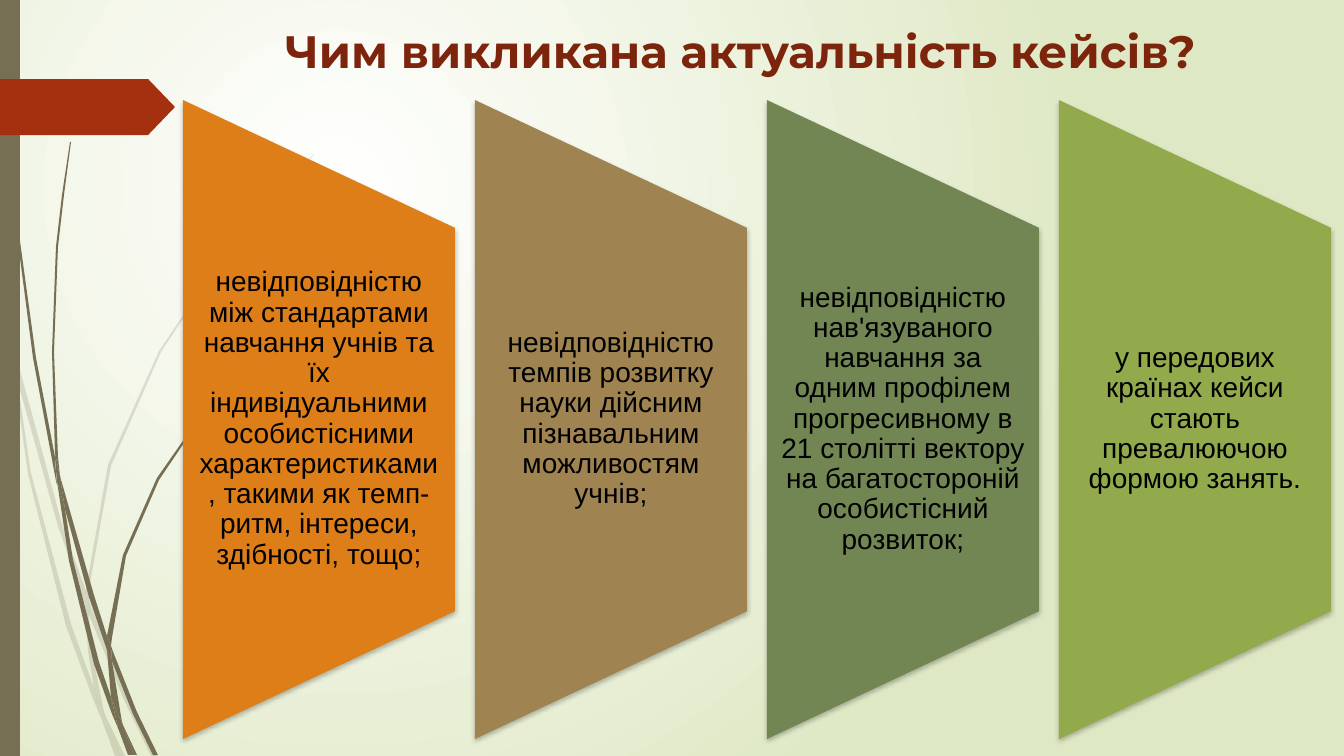
"""Build a slide with four sloping panels on a background of grass blades."""
import lxml.etree
import pptx
import pptx.dml.color
import pptx.enum.shapes
import pptx.enum.text
import pptx.oxml
import pptx.oxml.ns
import pptx.util

SHAPE = pptx.enum.shapes.MSO_SHAPE
ALIGN = pptx.enum.text.PP_ALIGN
ANCHOR = pptx.enum.text.MSO_ANCHOR
qn = pptx.oxml.ns.qn
NS = pptx.oxml.ns.nsdecls("a")

WIDTH, HEIGHT = 1344, 756
OLIVE, RUST, MAROON, BLACK = "766F54", "A53010", "7C240C", "000000"

# Each blade is drawn in pieces; a piece is a closed outline of (x, y) corners.
PALE_BLADES = [
    [(11, 353), (9, 325), (0, 284), (0, 301), (10, 347)],
    [(58, 526), (85, 604), (86, 591), (62, 524), (14, 348), (17, 379)],
    [(93, 612), (89, 601), (89, 615), (124, 700), (151, 756), (156, 756),
     (128, 698)],
    [(120, 756), (125, 756), (106, 717)],
    [(94, 688), (71, 624), (31, 473), (17, 379), (11, 353), (28, 474),
     (66, 626), (93, 699), (102, 720), (100, 713)],
    [(85, 604), (88, 651), (94, 688), (97, 698), (106, 717), (104, 712),
     (92, 651), (89, 615), (89, 613)],
    [(89, 589), (111, 466), (161, 352), (231, 247), (270, 200), (292, 176),
     (314, 155), (314, 154), (291, 176), (270, 199), (230, 246), (159, 351),
     (108, 465), (86, 589), (86, 591), (89, 601)],
    [(102, 720), (115, 756), (120, 756)],
    [(89, 613), (89, 615), (89, 601), (86, 591), (85, 604)],
    [(97, 698), (94, 688), (100, 713), (102, 720), (120, 756), (106, 717)],
]
DARK_BLADES = [
    [(7, 111), (17, 235), (33, 358), (56, 481), (57, 485), (55, 461),
     (55, 457), (36, 358), (19, 234), (8, 110), (5, 48), (4, 0), (3, 0),
     (4, 48)],
    [(89, 597), (107, 650), (107, 638), (107, 636), (94, 595), (60, 476),
     (65, 509)],
    [(114, 654), (111, 646), (112, 661), (133, 714), (153, 755), (158, 755),
     (137, 712)],
    [(111, 697), (99, 662), (73, 560), (65, 509), (57, 481), (69, 561),
     (94, 664), (112, 714), (118, 728), (117, 723)],
    [(60, 476), (58, 457), (54, 352), (58, 247), (64, 195), (71, 142),
     (70, 142), (62, 195), (56, 247), (52, 352), (55, 453)],
    [(134, 755), (137, 755), (123, 725)],
    [(57, 481), (65, 509), (60, 476), (55, 453), (55, 457)],
    [(112, 638), (126, 556), (159, 480), (207, 409), (233, 377), (247, 362),
     (263, 347), (262, 347), (247, 361), (233, 376), (206, 408), (157, 478),
     (123, 555), (107, 636), (111, 646)],
    [(118, 728), (128, 755), (132, 755)],
    [(107, 650), (111, 697), (117, 712), (123, 725), (122, 722), (112, 661),
     (110, 656)],
    [(107, 650), (110, 656), (112, 661), (111, 646), (107, 636), (107, 638)],
    [(117, 712), (111, 697), (117, 723), (118, 728), (131, 755), (134, 755),
     (123, 725)],
]

PANELS = [
    ("DE7E18", "невідповідністю між стандартами навчання учнів та їх "
     "індивідуальними особистісними характеристиками, такими як темп-ритм, "
     "інтереси, здібності, тощо;"),
    ("9F8351", "невідповідністю темпів розвитку науки дійсним пізнавальним "
     "можливостям учнів;"),
    ("728653", "невідповідністю нав'язуваного навчання за одним профілем "
     "прогресивному в 21 столітті вектору на багатостороній особистісний "
     "розвиток;"),
    ("92AA4C", "у передових країнах кейси стають превалюючою формою занять."),
]
PANEL_LEFT, PANEL_TOP, PANEL_PITCH = 183, 100, 292
PANEL_WIDTH, PANEL_HEIGHT = 272, 639
TEXT_TOP, TEXT_HEIGHT = 227, 384


def px(value):
    return pptx.util.Emu(round(value * 12192000 / WIDTH))


def rgb(code):
    return pptx.dml.color.RGBColor.from_string(code)


class Deck:
    """Holds the presentation, its current slide and the text style."""

    def __init__(self):
        self.prs = pptx.Presentation()
        self.prs.slide_width, self.prs.slide_height = px(WIDTH), px(HEIGHT)
        self.s = self.prs.slides.add_slide(self.prs.slide_layouts[6])

    def background(self, inner, outer):
        fill = self.s.background.fill
        fill.gradient()
        for stop, position, color in zip(fill.gradient_stops, (0, 1), (inner, outer)):
            stop.position = position
            stop.color.rgb = rgb(color)
        grad = self.s.background._cSld.find(".//" + qn("a:gradFill"))
        grad.replace(grad.find(qn("a:lin")), pptx.oxml.parse_xml(
            f'<a:path {NS} path="circle"><a:fillToRect l="50000" t="50000" '
            'r="100000" b="100000"/></a:path>'))

    def paint(self, sp, color, alpha=100):
        sp.shadow.inherit = False
        sp.fill.solid()
        sp.fill.fore_color.rgb = rgb(color)
        sp.line.fill.background()
        if alpha < 100:
            clr = sp._element.spPr.find(".//" + qn("a:srgbClr"))
            lxml.etree.SubElement(clr, qn("a:alpha"), val=str(alpha * 1000))

    def shape(self, kind, x, y, w, h, color):
        sp = self.s.shapes.add_shape(kind, px(x), px(y), px(w), px(h))
        self.paint(sp, color)
        return sp

    def blades(self, pieces, alpha=100):
        for piece in pieces:
            corners = [(px(x), px(y)) for x, y in piece]
            builder = self.s.shapes.build_freeform(*corners[0], scale=1.0)
            builder.add_line_segments(corners[1:], close=True)
            self.paint(builder.convert_to_shape(), OLIVE, alpha)

    def drop_shadow(self, sp):
        sp._element.spPr.find(qn("a:effectLst")).append(pptx.oxml.parse_xml(
            f'<a:outerShdw {NS} blurRad="38100" dist="25400" dir="5400000" '
            'rotWithShape="0"><a:srgbClr val="000000"><a:alpha val="25000"/>'
            '</a:srgbClr></a:outerShdw>'))

    def text(self, x, y, w, h, words, size, font, color, bold=False,
             align=ALIGN.LEFT, anchor=ANCHOR.TOP, spacing=1.0, inset=(10, 5)):
        tf = self.s.shapes.add_textbox(px(x), px(y), px(w), px(h)).text_frame
        tf.word_wrap = True
        tf.vertical_anchor = anchor
        tf.margin_left = tf.margin_right = px(inset[0])
        tf.margin_top = tf.margin_bottom = px(inset[1])
        tf.text = words
        p = tf.paragraphs[0]
        p.alignment, p.line_spacing = align, spacing
        f = p.runs[0].font
        f.size, f.name, f.bold = pptx.util.Pt(size), font, bold
        f.color.rgb = rgb(color)

    def panel(self, x, color, words):
        shift = (PANEL_HEIGHT - PANEL_WIDTH) / 2
        sp = self.shape(SHAPE.FLOWCHART_MANUAL_OPERATION, x - shift,
                        PANEL_TOP + shift, PANEL_HEIGHT, PANEL_WIDTH, color)
        sp.rotation = 270
        self.drop_shadow(sp)
        self.text(x, TEXT_TOP, PANEL_WIDTH, TEXT_HEIGHT, words, 20, "Arial",
                  BLACK, align=ALIGN.CENTER, anchor=ANCHOR.MIDDLE,
                  spacing=0.9, inset=(14, 0))


def main():
    deck = Deck()
    deck.background("FFFFFF", "DFE8C4")
    deck.blades(PALE_BLADES, alpha=20)
    deck.blades(DARK_BLADES)
    deck.shape(SHAPE.RECTANGLE, 0, 0, 20, HEIGHT, OLIVE)
    tag = deck.shape(SHAPE.PENTAGON, 0, 79, 175, 56, RUST)
    tag.adjustments[0] = 0.48
    deck.text(275, 18, 983, 81, "Чим викликана актуальність кейсів?",
              32.4, "Montserrat", MAROON, bold=True)
    for i, (color, words) in enumerate(PANELS):
        deck.panel(PANEL_LEFT + i * PANEL_PITCH, color, words)
    deck.prs.save("out.pptx")


if __name__ == "__main__":
    main()
